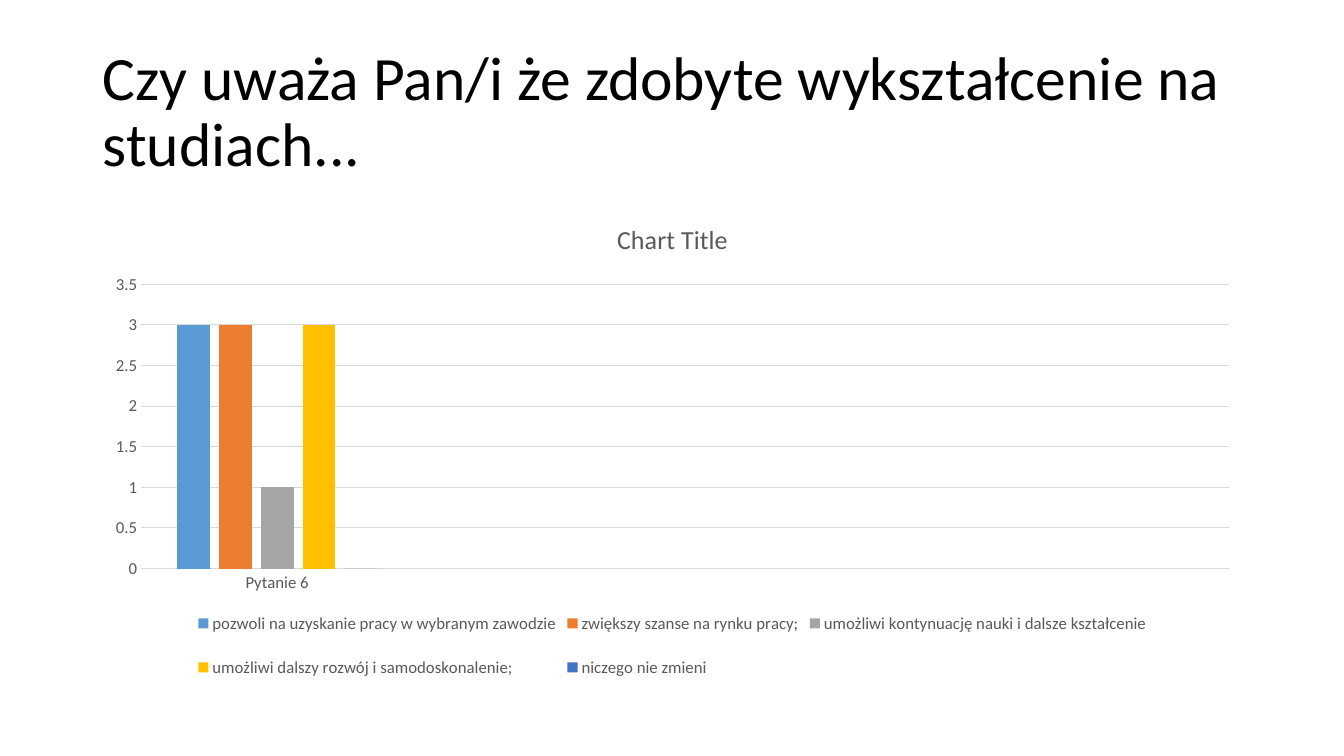
from pptx import Presentation
from pptx.chart.data import CategoryChartData as Data
from pptx.dml.color import RGBColor
from pptx.enum.chart import XL_CHART_TYPE as Kind, XL_LEGEND_POSITION as Place, XL_TICK_MARK as Tick
from pptx.enum.text import MSO_ANCHOR as Anchor, MSO_AUTO_SIZE as Fit, PP_ALIGN as Align
from pptx.util import Inches, Pt


def paint(color, code):
    color.rgb = RGBColor.from_string(code)


def style(font, size, code):
    font.name = "Calibri"
    font.size = Pt(size)
    font.bold = False
    paint(font.color, code)


deck = Presentation()
deck.slide_width = Inches(13.33)
deck.slide_height = Inches(7.5)
slide = deck.slides.add_slide(deck.slide_layouts[5])

title = slide.shapes.title
title.left, title.top = Inches(0.92), Inches(0.4)
title.width, title.height = Inches(11.5), Inches(1.45)
frame = title.text_frame
frame.text = "Czy uważa Pan/i że zdobyte wykształcenie na studiach..."
frame.word_wrap = True
frame.auto_size = Fit.NONE
frame.vertical_anchor = Anchor.MIDDLE
para = frame.paragraphs[0]
para.alignment = Align.LEFT
para.line_spacing = 0.9
style(para.font, 44, "000000")

answers = [
    ("pozwoli na uzyskanie pracy w wybranym zawodzie", 3, "5B9BD5"),
    ("zwiększy szanse na rynku pracy;\n", 3, "ED7D31"),
    ("umożliwi kontynuację nauki i dalsze kształcenie", 1, "A5A5A5"),
    ("umożliwi dalszy rozwój i samodoskonalenie;", 3, "FFC000"),
    ("niczego nie zmieni", 0, "4472C4"),
]
data = Data()
data.categories = ["Pytanie 6", "", "", ""]
for name, count, code in answers:
    data.add_series(name, [count, None, None, None])

chart = slide.shapes.add_chart(
    Kind.COLUMN_CLUSTERED, Inches(0.92), Inches(2), Inches(11.5), Inches(4.76), data
).chart
style(chart.font, 12, "595959")

chart.has_title = True
head = chart.chart_title
head.include_in_layout = False
head.text_frame.text = "Chart Title"
style(head.text_frame.paragraphs[0].font, 18.6, "595959")

chart.has_legend = True
legend = chart.legend
legend.position = Place.BOTTOM
legend.include_in_layout = False
style(legend.font, 12, "595959")

plot = chart.plots[0]
plot.gap_width = 219
plot.overlap = -27
plot.vary_by_categories = False
for bars, (name, count, code) in zip(plot.series, answers):
    bars.format.fill.solid()
    paint(bars.format.fill.fore_color, code)
    bars.invert_if_negative = False

base, scale = chart.category_axis, chart.value_axis
for axis in (base, scale):
    axis.major_tick_mark = axis.minor_tick_mark = Tick.NONE
    style(axis.tick_labels.font, 12, "595959")
scale.has_major_gridlines = True
scale.format.line.fill.background()
for line in (base.format.line, scale.major_gridlines.format.line):
    line.width = Pt(0.75)
    paint(line.color, "D9D9D9")

deck.save("out.pptx")
